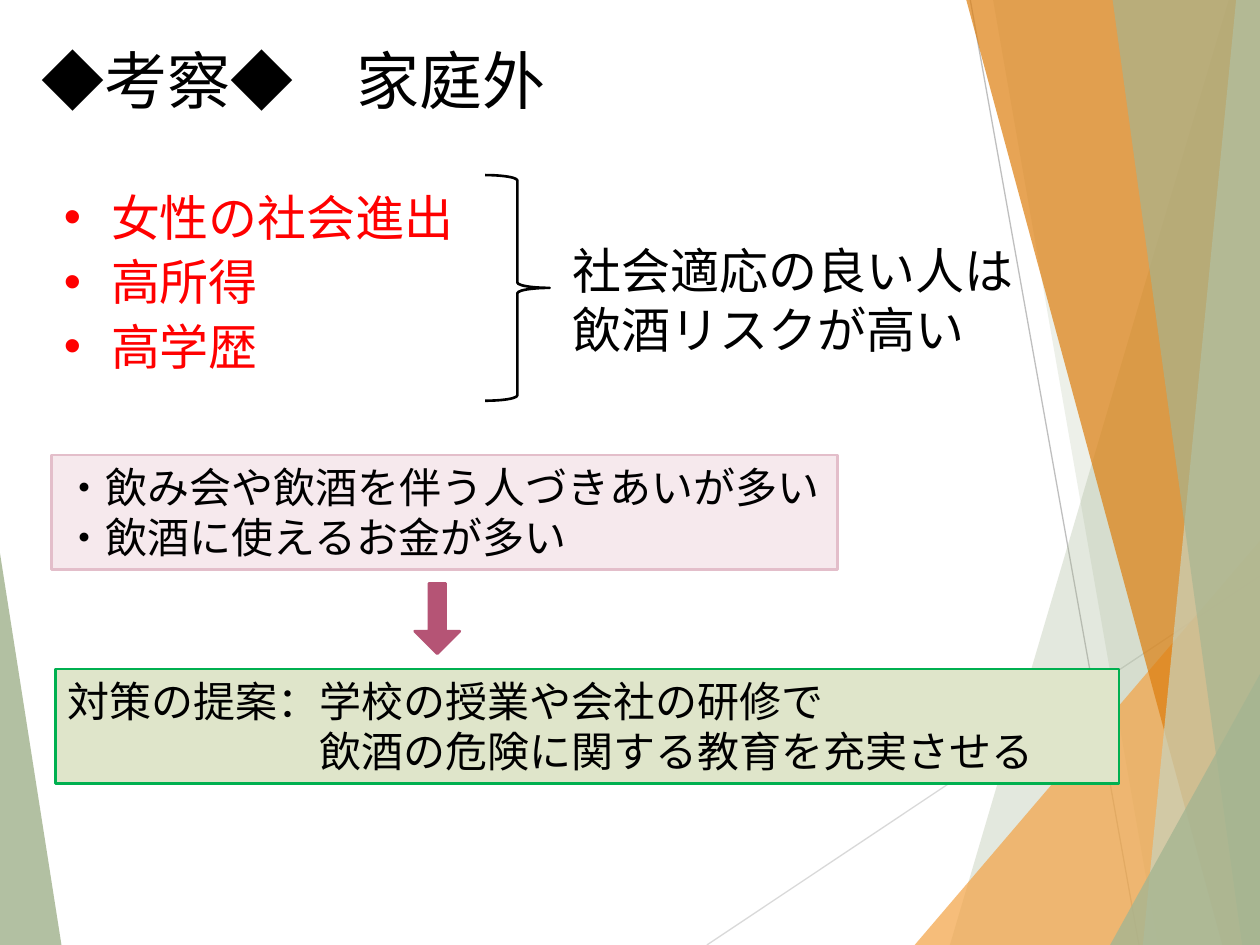
from dataclasses import dataclass

from lxml.etree import SubElement
from pptx import Presentation
from pptx.dml.color import RGBColor
from pptx.enum.shapes import MSO_CONNECTOR, MSO_SHAPE
from pptx.enum.text import MSO_ANCHOR, PP_ALIGN
from pptx.oxml.ns import qn
from pptx.util import Cm, Pt

WIDTH, HEIGHT = 25.4, 19.05  # cm, like every length below
FONT = "Lato"
BLACK = RGBColor(0x00, 0x00, 0x00)
RED = RGBColor(0xFF, 0x00, 0x00)
GREEN = RGBColor(0x00, 0xB0, 0x50)
PALE_GREEN = RGBColor(0xDF, 0xE5, 0xCA)
PALE_PINK = RGBColor(0xF6, 0xE9, 0xED)
PINK = RGBColor(0xE3, 0xBE, 0xCA)
ROSE = RGBColor(0xB5, 0x54, 0x75)
SAGE = RGBColor(0xA5, 0xB5, 0x92)
LIGHT_SAGE = RGBColor(0xC9, 0xD3, 0xBE)
ORANGE = RGBColor(0xF3, 0xA4, 0x47)
DARK_ORANGE = RGBColor(0xDD, 0x7E, 0x0E)
LIGHT_GRAY = RGBColor(0xD9, 0xD9, 0xD9)
GRAY = RGBColor(0xBF, 0xBF, 0xBF)

Point = tuple[float, float]


@dataclass
class Facet:
    points: list[Point]
    color: RGBColor
    opacity: int


@dataclass
class Ray:
    start: Point
    end: Point
    color: RGBColor


@dataclass
class Area:
    left: float
    top: float
    width: float
    height: float

    def lengths(self) -> list[Cm]:
        return [Cm(v) for v in (self.left, self.top, self.width, self.height)]


def right_band(top_x: float, bottom_x: float) -> list[Point]:
    """Outline from a slanted left edge to the right side of the slide."""
    return [(top_x, 0), (bottom_x, HEIGHT), (WIDTH, HEIGHT), (WIDTH, 0)]


def right_corner(bottom_x: float, side_y: float) -> list[Point]:
    return [(bottom_x, HEIGHT), (WIDTH, side_y), (WIDTH, HEIGHT)]


RAYS = [
    Ray((14.25, HEIGHT), (WIDTH, 11.61), LIGHT_GRAY),
    Ray((19.56, 0), (22.96, HEIGHT), GRAY),
]
LEFT_FACET = Facet([(0, 11.15), (1.24, HEIGHT), (0, HEIGHT)], SAGE, 85)
RIGHT_FACETS = [
    Facet(right_band(24.77, 19.15), SAGE, 30),
    Facet(right_band(20.02, 23.34), SAGE, 20),
    Facet(right_corner(18.44, 10.9), ORANGE, 72),
    Facet(right_band(19.48, 24.64), DARK_ORANGE, 70),
    Facet(right_band(24.92, 23.04), LIGHT_SAGE, 70),
    Facet(right_band(22.43, 25.04), SAGE, 65),
    Facet(right_corner(22.38, 13.59), SAGE, 80),
]


def draw_facet(page, facet: Facet) -> None:
    first, *rest = [(Cm(x), Cm(y)) for x, y in facet.points]
    builder = page.shapes.build_freeform(*first)
    builder.add_line_segments(rest, close=True)
    shape = builder.convert_to_shape()
    shape.shadow.inherit = False
    shape.fill.solid()
    shape.fill.fore_color.rgb = facet.color
    shape.line.fill.background()
    color = shape.fill._xPr.find(".//" + qn("a:srgbClr"))
    SubElement(color, qn("a:alpha"), val=str(facet.opacity * 1000))


def draw_ray(page, ray: Ray) -> None:
    ends = [Cm(v) for v in (*ray.start, *ray.end)]
    line = page.shapes.add_connector(MSO_CONNECTOR.STRAIGHT, *ends)
    line.line.color.rgb = ray.color
    line.line.width = Pt(0.75)
    SubElement(line._element.spPr, qn("a:effectLst"))


def add_figure(page, kind, area: Area, line: RGBColor, fill: RGBColor | None = None):
    shape = page.shapes.add_shape(kind, *area.lengths())
    shape.shadow.inherit = False
    if fill is None:
        shape.fill.background()
    else:
        shape.fill.solid()
        shape.fill.fore_color.rgb = fill
    shape.line.color.rgb = line
    shape.line.width = Pt(1.5)
    return shape


def write(shape, *lines: str, size: float, color: RGBColor = BLACK,
          hanging: float = 0, bullet: str = "", spacing: float | None = None) -> None:
    """Fill the shape with one paragraph per line; a vertical tab breaks a line."""
    frame = shape.text_frame
    frame.word_wrap = True
    frame.vertical_anchor = MSO_ANCHOR.TOP
    frame.text = "\n".join(lines)
    for para in frame.paragraphs:
        para.alignment = PP_ALIGN.LEFT
        if spacing:
            para.line_spacing = Pt(spacing)
        props = para._p.get_or_add_pPr()
        if hanging:
            props.set("marL", str(Cm(hanging)))
            props.set("indent", str(-Cm(hanging)))
        if bullet:
            SubElement(props, qn("a:buFont"), typeface="Arial")
            SubElement(props, qn("a:buChar"), char=bullet)
        for span in para.runs:
            span.font.name = FONT
            span.font.size = Pt(size)
            span.font.color.rgb = color


def add_text(page, area: Area, *lines: str, **text_format) -> None:
    write(page.shapes.add_textbox(*area.lengths()), *lines, **text_format)


def main() -> None:
    deck = Presentation()
    deck.slide_width, deck.slide_height = Cm(WIDTH), Cm(HEIGHT)
    page = deck.slides.add_slide(deck.slide_layouts[6])

    draw_facet(page, LEFT_FACET)
    for ray in RAYS:
        draw_ray(page, ray)
    for facet in RIGHT_FACETS:
        draw_facet(page, facet)

    add_text(page, Area(1.04, 3.53, 8.94, 5.54), "女性の社会進出", "高所得", "高学歴",
             size=28, color=RED, hanging=0.95, bullet="•", spacing=37)
    add_text(page, Area(0.58, 0.71, 17.68, 1.8), "◆考察◆　家庭外", size=36)

    reasons = add_figure(page, MSO_SHAPE.RECTANGLE, Area(1.04, 9.17, 15.85, 2.31),
                         PINK, PALE_PINK)
    write(reasons, "・飲み会や飲酒を伴う人づきあいが多い", "・飲酒に使えるお金が多い", size=24)

    proposal = add_figure(page, MSO_SHAPE.RECTANGLE, Area(1.12, 13.49, 21.44, 2.31),
                          GREEN, PALE_GREEN)
    # The second line starts below the text after the six-character label.
    write(proposal, "対策の提案：学校の授業や会社の研修で\v飲酒の危険に関する教育を充実させる",
          size=24, hanging=5.08)

    arrow = add_figure(page, MSO_SHAPE.DOWN_ARROW, Area(8.36, 11.76, 0.91, 1.42), ROSE, ROSE)
    arrow.adjustments[0] = 0.37
    add_figure(page, MSO_SHAPE.RIGHT_BRACE, Area(9.78, 3.53, 1.3, 4.55), BLACK)
    add_text(page, Area(11.3, 4.72, 12.34, 2.64), "社会適応の良い人は", "飲酒リスクが高い", size=28)

    deck.save("out.pptx")


if __name__ == "__main__":
    main()
